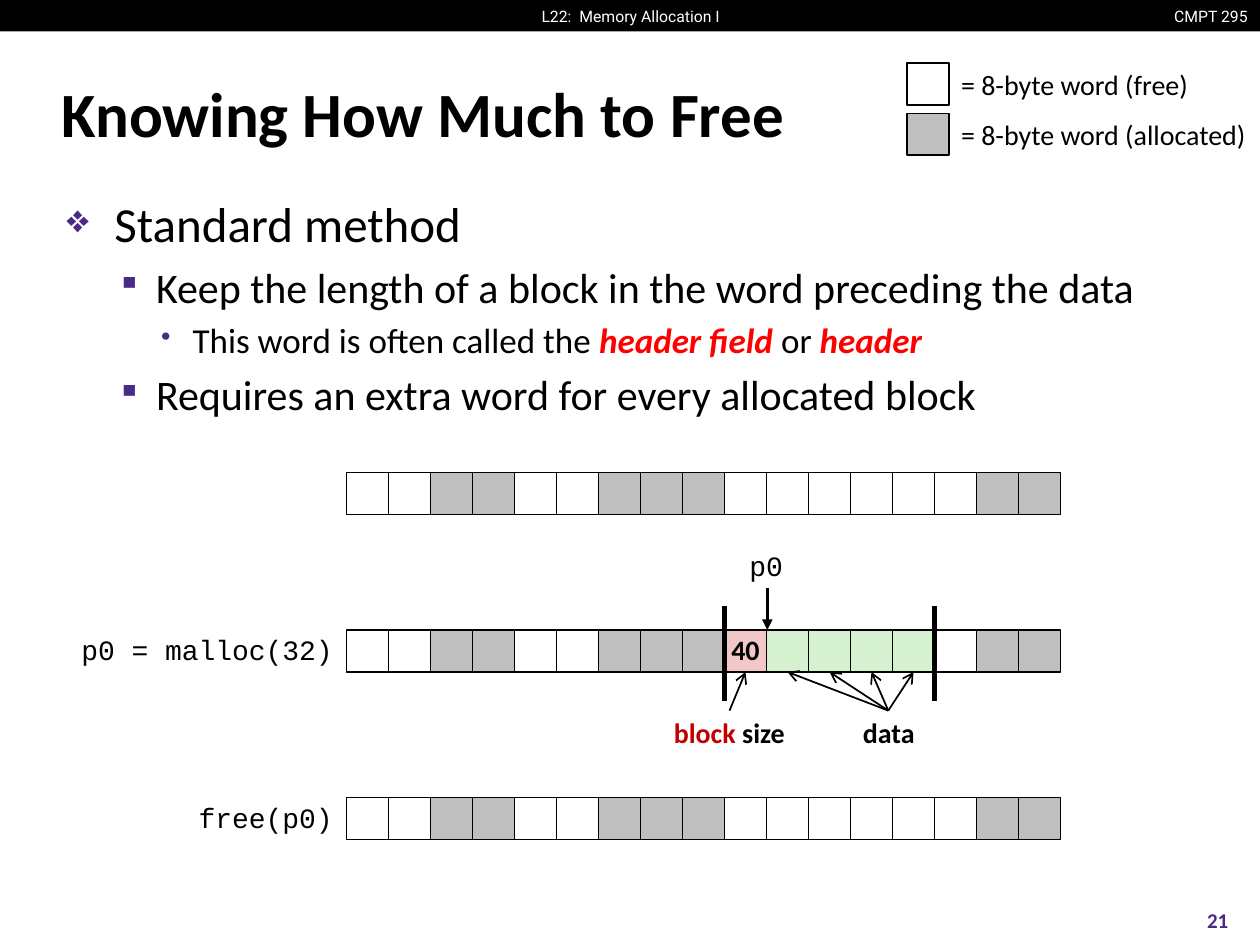
from lxml import etree
from pptx import Presentation
from pptx.dml.color import RGBColor
from pptx.enum.shapes import MSO_CONNECTOR, MSO_SHAPE
from pptx.enum.text import MSO_ANCHOR, PP_ALIGN
from pptx.oxml.ns import qn
from pptx.util import Inches, Pt

RECTANGLE = MSO_SHAPE.RECTANGLE
STRAIGHT = MSO_CONNECTOR.STRAIGHT
TOP, MIDDLE = MSO_ANCHOR.TOP, MSO_ANCHOR.MIDDLE
LEFT, CENTER, RIGHT = PP_ALIGN.LEFT, PP_ALIGN.CENTER, PP_ALIGN.RIGHT
BOTTOM_SITE = 2

BLACK, WHITE, PURPLE, RED, DARK_RED = "000000", "FFFFFF", "4B2A85", "FF0000", "C00000"
BODY, CODE, BANNER = "Calibri", "Courier New", "Roboto"
WORD_FILLS = {"free": WHITE, "allocated": "BFBFBF", "header": "F1C7C7", "data": "D5F1CF"}

CELL = 1 / 3
ROW_LEFT = 2.75
HEAP = ["free"] * 2 + ["allocated"] * 2 + ["free"] * 2 + ["allocated"] * 3
TAIL = ["allocated"] * 2
FREE_HEAP = HEAP + ["free"] * 6 + TAIL
USED_HEAP = HEAP + ["header"] + ["data"] * 4 + ["free"] + TAIL
HEADER_INDEX = USED_HEAP.index("header")
BLOCK_END = HEADER_INDEX + 5

BULLETS = [("❖", 80, 0.38, 0.38), ("▪", 80, 0.71, 0.31), ("•", 80, 1, 0.25)]
OUTLINE = [
    (0, 28, [("Standard method", BLACK, False)]),
    (1, 24, [("Keep the length of a block in the word preceding the data", BLACK, False)]),
    (2, 20, [("This word is often called the ", BLACK, False), ("header field ", RED, True),
             ("or ", BLACK, False), ("header", RED, True)]),
    (1, 24, [("Requires an extra word for every allocated block", BLACK, False)]),
]


def color(code):
    """Turn a hex string into a colour."""
    return RGBColor.from_string(code)


def add_span(para, text, size, font=BODY, code=BLACK, bold=False, italic=False):
    """Append one formatted run to a paragraph."""
    span = para.add_run()
    span.text = text
    span.font.name, span.font.size = font, Pt(size)
    span.font.bold, span.font.italic = bold, italic
    span.font.color.rgb = color(code)


def set_frame(frame, anchor, wrap=False, inset=0.05):
    """Set anchor, wrapping and vertical insets of a text frame."""
    frame.word_wrap = wrap
    frame.vertical_anchor = anchor
    frame.margin_top = frame.margin_bottom = Inches(inset)


def add_label(page, left, top, width, height, spans, align=LEFT, anchor=MIDDLE, inset=0.05,
              spacing=1.0, **style):
    """Add a one-line text box from (text, colour) spans."""
    box = page.shapes.add_textbox(Inches(left), Inches(top), Inches(width), Inches(height))
    set_frame(box.text_frame, anchor, inset=inset)
    if align == LEFT:
        box.text_frame.margin_right = 0
    para = box.text_frame.paragraphs[0]
    para.alignment, para.line_spacing = align, spacing
    for text, code in spans:
        add_span(para, text, code=code, **style)


def add_banner(page):
    """Add the black strip with lecture and course names."""
    strip = page.shapes.add_shape(RECTANGLE, 0, 0, Inches(10), Inches(0.25))
    strip.shadow.inherit = False
    strip.fill.solid()
    strip.fill.fore_color.rgb = color(BLACK)
    strip.line.fill.background()
    add_label(page, 9.19, 0, 0.81, 0.25, [("CMPT 295", WHITE)], RIGHT, size=9, font=BANNER)
    add_label(page, 4.19, 0, 1.63, 0.25, [("L22:  Memory Allocation I", WHITE)], CENTER,
              size=9, font=BANNER)


def add_bullet(para, level):
    """Give a paragraph its level's indent, spacing and bullet."""
    mark, percent, margin, hanging = BULLETS[level]
    para.level = level
    props = para._p.get_or_add_pPr()
    props.set("marL", str(Inches(margin)))
    props.set("indent", str(-Inches(hanging)))
    before = etree.SubElement(props, qn("a:spcBef"))
    etree.SubElement(before, qn("a:spcPct"), val="20000")
    tint = etree.SubElement(props, qn("a:buClr"))
    etree.SubElement(tint, qn("a:srgbClr"), val=PURPLE)
    etree.SubElement(props, qn("a:buSzPct"), val=str(percent * 1000))
    etree.SubElement(props, qn("a:buChar"), char=mark)


def add_outline(page):
    """Add the bulleted outline."""
    box = page.shapes.add_textbox(Inches(0.43), Inches(1.49), Inches(9.15), Inches(5.44))
    frame = box.text_frame
    set_frame(frame, TOP, wrap=True)
    for index, (level, size, spans) in enumerate(OUTLINE):
        para = frame.add_paragraph() if index else frame.paragraphs[0]
        add_bullet(para, level)
        for text, code, strong in spans:
            add_span(para, text, size, code=code, bold=strong, italic=strong)


def add_word(page, left, top, kind):
    """Add one memory word as a square."""
    cell = page.shapes.add_shape(RECTANGLE, Inches(left), Inches(top), Inches(CELL), Inches(CELL))
    cell.shadow.inherit = False
    cell.fill.solid()
    cell.fill.fore_color.rgb = color(WORD_FILLS[kind])
    cell.line.color.rgb = color(BLACK)
    cell.line.width = Pt(1)
    return cell


def add_heap(page, top, kinds):
    """Add a row of memory words."""
    return [add_word(page, ROW_LEFT + i * CELL, top, kind) for i, kind in enumerate(kinds)]


def add_line(page, start, end, width, head=None, target=None):
    """Add a straight line, with an optional arrowhead and target cell."""
    line = page.shapes.add_connector(STRAIGHT, *(Inches(value) for value in start + end))
    if target is not None:
        line.end_connect(target, BOTTOM_SITE)
    line.line.color.rgb = color(BLACK)
    line.line.width = Pt(width)
    if head:
        etree.SubElement(line.line._get_or_add_ln(), qn("a:tailEnd"), type=head)
    etree.SubElement(line._element.spPr, qn("a:effectLst"))


def add_allocated_block(page, top):
    """Add the heap row after malloc, with its block annotations."""
    cells = add_heap(page, top, USED_HEAP)
    header = cells[HEADER_INDEX]
    set_frame(header.text_frame, MIDDLE)
    para = header.text_frame.paragraphs[0]
    para.alignment, para.line_spacing = CENTER, 0.98
    add_span(para, "40", 16, bold=True)
    for edge in (HEADER_INDEX, BLOCK_END):
        x = ROW_LEFT + edge * CELL
        add_line(page, (x, 4.81), (x, 5.56), 3)
    add_label(page, 5.85, 4.33, 0.47, 0.36, [("p0", BLACK)], anchor=TOP, spacing=0.94,
              size=16, font=CODE)
    add_line(page, (6.09, 4.67), (6.09, top), 2, "triangle")
    for index in range(HEADER_INDEX, BLOCK_END):
        start = (5.79 if index == HEADER_INDEX else 7.05, 5.64)
        end = (ROW_LEFT + (index + 0.5) * CELL, top + CELL)
        add_line(page, start, end, 1, "arrow", cells[index])
    for left, width, spans in [(5.25, 1.09, [("block ", DARK_RED), ("size", BLACK)]),
                               (6.75, 0.61, [("data", BLACK)])]:
        add_label(page, left, 5.64, width, 0.37, spans, anchor=TOP, spacing=0.98,
                  size=16, bold=True)


def add_legend(page):
    """Add the key for free and allocated words."""
    for top, kind in [(0.5, "free"), (0.9, "allocated")]:
        add_word(page, 7.2, top, kind)
        add_label(page, 7.53, top, 2.45, CELL, [(f"= 8-byte word ({kind})", BLACK)],
                  inset=0, size=16)


def main():
    """Build and save the slide."""
    deck = Presentation()
    deck.slide_width, deck.slide_height = Inches(10), Inches(7.5)
    page = deck.slides.add_slide(deck.slide_layouts[6])
    add_banner(page)
    add_label(page, 0.39, 0.48, 9.19, 0.83, [("Knowing How Much to Free", BLACK)],
              size=36, bold=True)
    add_outline(page)
    add_label(page, 9.33, 7.1, 0.67, 0.4, [("21", PURPLE)], CENTER, size=12, bold=True)
    for top, call in [(5, "p0 = malloc(32)"), (6.33, "free(p0)")]:
        add_label(page, 0.44, top, 2.3, CELL, [(call, BLACK)], RIGHT, inset=0, spacing=0.94,
                  size=16, font=CODE)
    for top in (3.75, 6.33):
        add_heap(page, top, FREE_HEAP)
    add_allocated_block(page, 5)
    add_legend(page)
    deck.save("out.pptx")


if __name__ == "__main__":
    main()
